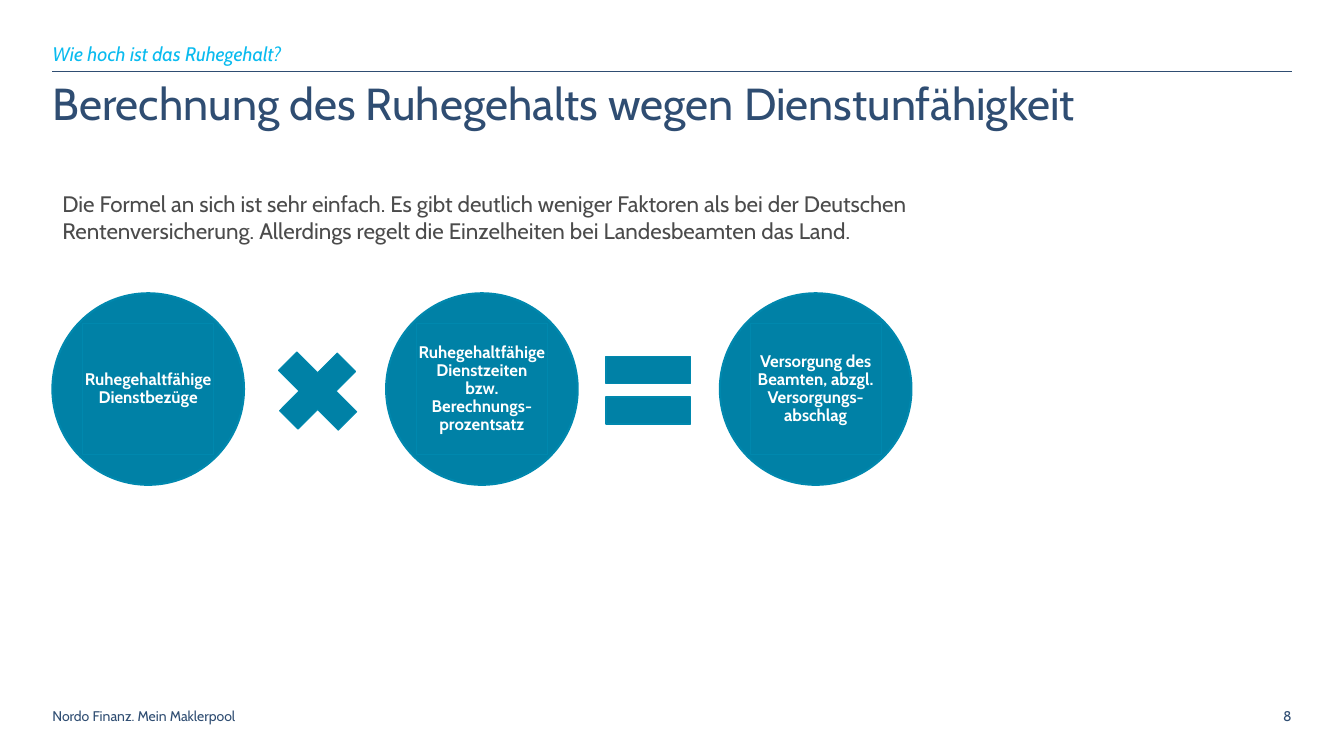
import pptx
import pptx.util
import pptx.dml.color
import pptx.enum.shapes
import pptx.enum.text
import pptx.oxml
import pptx.oxml.ns

SHAPE = pptx.enum.shapes.MSO_SHAPE
ALIGN = pptx.enum.text.PP_ALIGN
ANCHOR = pptx.enum.text.MSO_ANCHOR
COLORS = {
    "navy": "2F4D72",
    "sky": "0ABBEF",
    "gray": "4B4B4B",
    "teal": "0081A6",
    "edge": "0088AE",
    "white": "FFFFFF",
}


class SlideBuilder:
    """Holds the style and the current slide; lengths are px, 100 to the inch."""

    scale = 9144
    font_name = "Cabin"

    def __init__(self, deck, layout_index):
        self.page = deck.slides.add_slide(deck.slide_layouts[layout_index])

    def emu(self, *lengths):
        return [pptx.util.Emu(length * self.scale) for length in lengths]

    def color(self, name):
        return pptx.dml.color.RGBColor.from_string(COLORS[name])

    def fill_text(self, box, text, color, size, inset=(0, 0), anchor=ANCHOR.TOP, wrap=True,
                  align=ALIGN.LEFT, spacing=1.0, after=0, **font):
        frame = box.text_frame
        side, top = self.emu(*inset)
        frame_format = {
            "margin_left": side, "margin_right": side,
            "margin_top": top, "margin_bottom": top,
            "vertical_anchor": anchor, "word_wrap": wrap,
            "auto_size": pptx.enum.text.MSO_AUTO_SIZE.NONE,
        }
        for key, value in frame_format.items():
            setattr(frame, key, value)
        para = frame.paragraphs[0]
        para_format = {
            "alignment": align, "line_spacing": spacing,
            "space_before": pptx.util.Pt(0), "space_after": pptx.util.Pt(after),
        }
        for key, value in para_format.items():
            setattr(para, key, value)
        span = para.add_run()
        span.text = text
        font_format = {"name": self.font_name, "size": pptx.util.Pt(size), **font}
        for key, value in font_format.items():
            setattr(span.font, key, value)
        span.font.color.rgb = self.color(color)

    def placeholder(self, index, place, text, color, size, **style):
        box = self.page.placeholders[index]
        for key, value in zip(("left", "top", "width", "height"), self.emu(*place)):
            setattr(box, key, value)
        self.fill_text(box, text, color, size, **style)
        return box

    def plain(self, box):
        """Removes the bullet and its indent."""
        properties = box.text_frame.paragraphs[0]._p.get_or_add_pPr()
        properties.set("marL", "0")
        properties.set("indent", "0")
        bullet = pptx.oxml.parse_xml(f'<a:buNone {pptx.oxml.ns.nsdecls("a")}/>')
        properties.append(bullet)

    def text(self, place, text, color, size, **style):
        box = self.page.shapes.add_textbox(*self.emu(*place))
        self.fill_text(box, text, color, size, **style)

    def shape(self, kind, place, line_width, rotation=0, parent=None):
        shapes = (parent or self.page).shapes
        shape = shapes.add_shape(kind, *self.emu(*place))
        shape.shadow.inherit = False
        shape.rotation = rotation
        shape.fill.solid()
        shape.fill.fore_color.rgb = self.color("teal")
        shape.line.color.rgb = self.color("edge")
        shape.line.width = pptx.util.Pt(line_width)
        return shape

    def circle(self, left, top, size, label):
        inner, margin = 130, 30
        group = self.page.shapes.add_group_shape()
        self.shape(SHAPE.OVAL, (left, top, size, size), 1.5, parent=group)
        box = self.shape(SHAPE.RECTANGLE, (left + margin, top + margin, inner, inner),
                         0.75, parent=group)
        self.fill_text(box, label, "white", 12, inset=(2, 2), anchor=ANCHOR.MIDDLE,
                       align=ALIGN.CENTER, spacing=0.9, bold=True)

    def rule(self, left, right, y, color, width):
        line = self.page.shapes.add_connector(
            pptx.enum.shapes.MSO_CONNECTOR.STRAIGHT, *self.emu(left, y, right, y))
        line.line.color.rgb = self.color(color)
        line.line.width = pptx.util.Pt(width)
        effects = pptx.oxml.parse_xml(f'<a:effectLst {pptx.oxml.ns.nsdecls("a")}/>')
        line._element.spPr.append(effects)


def main():
    deck = pptx.Presentation()
    deck.slide_width, deck.slide_height = pptx.util.Inches(13.33), pptx.util.Inches(7.5)
    slide = SlideBuilder(deck, 1)
    left, right = 52, 1281

    # Heading
    slide.rule(left, right, 71, "navy", 0.5)
    slide.placeholder(0, (left, 81, 1228, 48),
                      "Berechnung des Ruhegehalts wegen Dienstunfähigkeit",
                      "navy", 32, spacing=0.9)
    kicker = slide.placeholder(1, (left, 41, 1228, 24), "Wie hoch ist das Ruhegehalt?",
                               "sky", 14, anchor=ANCHOR.BOTTOM, italic=True)
    slide.plain(kicker)

    # Introduction
    slide.text((left, 184, 929, 107),
               "Die Formel an sich ist sehr einfach. Es gibt deutlich weniger Faktoren "
               "als bei der Deutschen Rentenversicherung. Allerdings regelt die "
               "Einzelheiten bei Landesbeamten das Land.",
               "gray", 16, inset=(10, 5), after=12)

    # Formula: three circles at equal steps, with the operators between them
    labels = (
        "Ruhegehaltfähige Dienstbezüge",
        "Ruhegehaltfähige Dienstzeiten bzw. Berechnungs-prozentsatz",
        "Versorgung des Beamten, abzgl. Versorgungs-abschlag",
    )
    top, size, step = 291, 190, 331
    for index, label in enumerate(labels):
        slide.circle(left + index * step, top, size, label)
    slide.shape(SHAPE.MATH_PLUS, (258, 333, 114, 110), 0.75, rotation=45)
    slide.shape(SHAPE.MATH_EQUAL, (586, 330, 114, 114), 1)

    # Footer
    slide.text((left, 702, 187, 17), "Nordo Finanz. Mein Maklerpool", "navy", 10,
               anchor=ANCHOR.MIDDLE, wrap=False)
    slide.text((right - 50, 702, 50, 17), "8", "navy", 10,
               anchor=ANCHOR.MIDDLE, align=ALIGN.RIGHT)

    deck.save("out.pptx")


if __name__ == "__main__":
    main()
